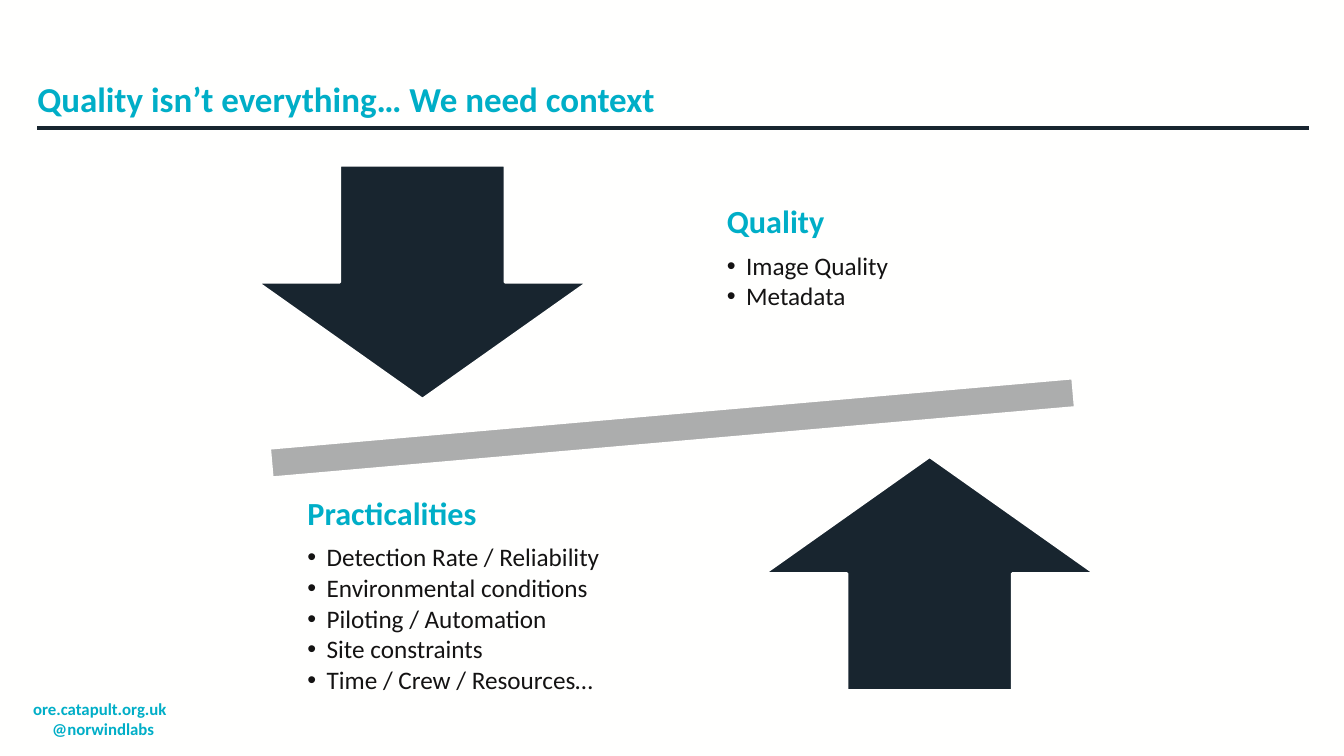
"""Build the slide that weighs image quality against practicalities."""
from dataclasses import dataclass

from lxml import etree
from pptx import Presentation
from pptx import util as u
from pptx.dml.color import RGBColor
from pptx.enum import shapes, text
from pptx.oxml import ns

PX = 9144
FONT = "Calibri"
PAPER = RGBColor(0xFF, 0xFF, 0xFE)
NAVY = RGBColor(0x18, 0x25, 0x2F)
TEAL = RGBColor(0x00, 0xAE, 0xC7)
GREY = RGBColor(0xAC, 0xAD, 0xAD)
INK = RGBColor(0x14, 0x13, 0x13)


@dataclass(frozen=True)
class Box:
    left: int
    top: int
    width: int
    height: int

    def emu(self) -> tuple[int, ...]:
        return tuple(px(n) for n in (self.left, self.top, self.width, self.height))


@dataclass(frozen=True)
class Block:
    kind: shapes.MSO_SHAPE
    box: Box
    color: RGBColor
    rotation: int = 0


@dataclass(frozen=True)
class Topic:
    box: Box
    heading: str
    bullets: tuple[str, ...]


BLOCKS = (
    Block(shapes.MSO_SHAPE.DOWN_ARROW, Box(255, 164, 328, 232), NAVY),
    Block(shapes.MSO_SHAPE.UP_ARROW, Box(758, 453, 328, 232), NAVY),
    Block(shapes.MSO_SHAPE.MATH_MINUS, Box(123, 362, 1088, 125), GREY, 355),
)
TOPICS = (
    Topic(Box(703, 135, 350, 243), "Quality", ("Image Quality", "Metadata")),
    Topic(
        Box(287, 470, 350, 243),
        "Practicalities",
        (
            "Detection Rate / Reliability",
            "Environmental conditions",
            "Piloting / Automation",
            "Site constraints",
            "Time / Crew / Resources…",
        ),
    ),
)


def px(count: int) -> u.Emu:
    return u.Emu(count * PX)


def style(para, size: int, color: RGBColor, bold: bool) -> None:
    for span in para.runs:
        span.font.name = FONT
        span.font.size = u.Pt(size)
        span.font.bold = bold
        span.font.color.rgb = color


def set_insets(frame, left: int, top: int, right: int, bottom: int) -> None:
    frame.margin_left, frame.margin_top = px(left), px(top)
    frame.margin_right, frame.margin_bottom = px(right), px(bottom)


def add_bullet(para) -> None:
    props = para._p.get_or_add_pPr()
    props.set("marL", str(px(19)))
    props.set("indent", str(px(-19)))
    etree.SubElement(props, ns.qn("a:buFont"), typeface="Arial")
    etree.SubElement(props, ns.qn("a:buChar"), char="•")


def set_title(page) -> None:
    title = page.shapes.title
    title.left, title.top, title.width, title.height = Box(37, 30, 1260, 97).emu()
    frame = title.text_frame
    frame.text = "Quality isn’t everything… We need context"
    frame.word_wrap = True
    frame.auto_size = text.MSO_AUTO_SIZE.NONE
    frame.vertical_anchor = text.MSO_ANCHOR.BOTTOM
    set_insets(frame, 0, 4, 20, 8)
    frame.paragraphs[0].alignment = text.PP_ALIGN.LEFT
    style(frame.paragraphs[0], 25, TEAL, True)


def draw_rule(page) -> None:
    rule = page.shapes.add_connector(
        shapes.MSO_CONNECTOR.STRAIGHT, px(37), px(127), px(1298), px(127)
    )
    rule.line.color.rgb = NAVY
    rule.line.width = u.Pt(3)
    etree.SubElement(rule._element.spPr, ns.qn("a:effectLst"))


def draw_footer(page) -> None:
    frame = page.shapes.add_textbox(*Box(23, 688, 213, 50).emu()).text_frame
    frame.word_wrap = True
    frame.text = "ore.catapult.org.uk\n@norwindlabs"
    for para in frame.paragraphs:
        style(para, 12, TEAL, True)
    frame.paragraphs[1]._p.get_or_add_pPr().set("marL", str(px(19)))


def draw_block(page, block: Block) -> None:
    shape = page.shapes.add_shape(block.kind, *block.box.emu())
    shape.rotation = block.rotation
    shape.shadow.inherit = False
    shape.fill.solid()
    shape.fill.fore_color.rgb = block.color
    shape.line.color.rgb = PAPER
    shape.line.width = u.Pt(2)


def draw_topic(page, topic: Topic) -> None:
    frame = page.shapes.add_textbox(*topic.box.emu()).text_frame
    frame.word_wrap = True
    frame.vertical_anchor = text.MSO_ANCHOR.MIDDLE
    set_insets(frame, 18, 18, 18, 18)
    frame.text = "\n".join((topic.heading, *topic.bullets))
    heading, *bullets = frame.paragraphs
    for para in frame.paragraphs:
        para.line_spacing = 0.9
    heading.space_after = u.Pt(9)
    style(heading, 23, TEAL, True)
    for para in bullets:
        para.space_after = u.Pt(2.4)
        add_bullet(para)
        style(para, 18, INK, False)


def main() -> None:
    deck = Presentation()
    deck.slide_width, deck.slide_height = px(1333), px(750)
    page = deck.slides.add_slide(deck.slide_layouts.get_by_name("Title Only"))
    page.background.fill.solid()
    page.background.fill.fore_color.rgb = PAPER
    set_title(page)
    draw_rule(page)
    draw_footer(page)
    for block in BLOCKS:
        draw_block(page, block)
    for topic in TOPICS:
        draw_topic(page, topic)
    deck.save("out.pptx")


if __name__ == "__main__":
    main()
